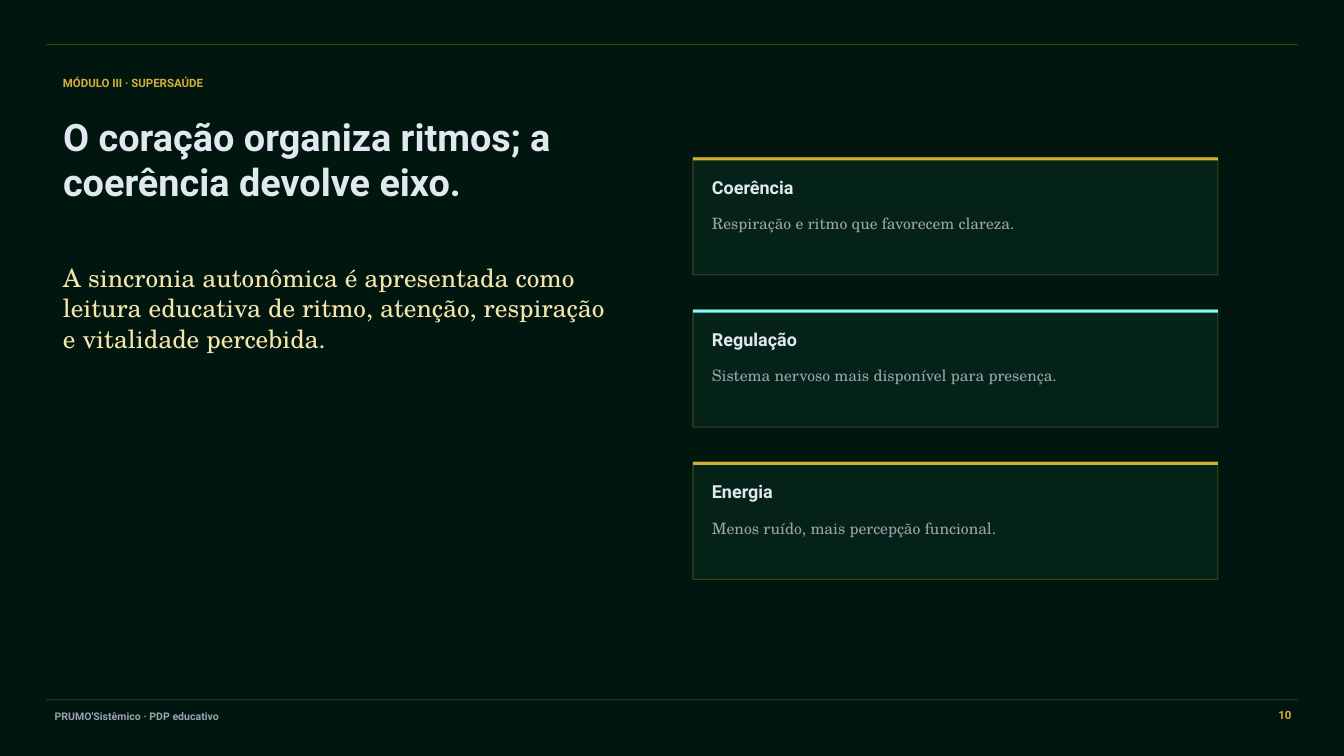
"""Build the slide on heart coherence, with three cards on the right."""
from dataclasses import dataclass

from pptx import Presentation
from pptx.dml.color import RGBColor as RGB
from pptx.enum.shapes import MSO_SHAPE as SHAPE
from pptx.enum.text import MSO_ANCHOR as ANCHOR, MSO_AUTO_SIZE as FIT, PP_ALIGN as ALIGN
from pptx.oxml.ns import qn
from pptx.util import Pt


@dataclass(frozen=True)
class Theme:
    night: str = "01160F"
    panel: str = "08291F"
    gold: str = "D4AF37"
    cyan: str = "7FFCFF"
    light: str = "E2E8F0"
    cream: str = "F3E5AB"
    gray: str = "9CA3AF"
    sans: str = "Roboto"
    serif: str = "TeX Gyre Schola"
    title: float = 27
    lead: float = 18
    heading: float = 12.8
    body: float = 11.2
    label: float = 8.2
    footer: float = 7.5
    line_alpha: int = 27
    panel_alpha: int = 67


T = Theme()
MODULE = "MÓDULO III · SUPERSAÚDE"
TITLE = "O coração organiza ritmos; a coerência devolve eixo."
LEAD = ("A sincronia autonômica é apresentada como leitura educativa de ritmo, "
        "atenção, respiração e vitalidade percebida.")
CARDS = [
    ("Coerência", "Respiração e ritmo que favorecem clareza.", T.gold),
    ("Regulação", "Sistema nervoso mais disponível para presença.", T.cyan),
    ("Energia", "Menos ruído, mais percepção funcional.", T.gold),
]
FOOTER = "PRUMO'Sistêmico · PDP educativo"
PAGE = "10"

WIDTH, HEIGHT = 960, 540
LEFT, COLUMN = 45, 390
RULE_X, RULE_W, RULE_YS = 33, 894, (31.5, 499.5)
CARD_X, CARD_Y, CARD_W, CARD_H, CARD_STEP = 495, 112.4, 375, 84, 108.75
PAD = 13.5


def paint(fill, color, alpha=100):
    fill.solid()
    fill.fore_color.rgb = RGB.from_string(color)
    if alpha < 100:
        for node in fill._xPr.iter(qn("a:srgbClr")):
            if node.get("val") == color and node.find(qn("a:alpha")) is None:
                node.add_alpha(alpha) if hasattr(node, "add_alpha") else \
                    node.makeelement(qn("a:alpha"), {})
                if node.find(qn("a:alpha")) is None:
                    node.append(node.makeelement(qn("a:alpha"), {"val": str(alpha * 1000)}))


def place(sp, x, y, w, h):
    sp.left, sp.top, sp.width, sp.height = Pt(x), Pt(y), Pt(w), Pt(h)


def add_rect(s, box, color, alpha=100, outline=None):
    sp = s.shapes.add_shape(SHAPE.RECTANGLE, *map(Pt, box))
    sp.shadow.inherit = False
    paint(sp.fill, color, alpha)
    if outline:
        sp.line.width = Pt(0.75)
        paint(sp.line.fill, outline, T.line_alpha)
    else:
        sp.line.fill.background()


def write(sp, text, size, color, font=T.sans, bold=True, align=ALIGN.LEFT):
    tf = sp.text_frame
    tf.word_wrap, tf.auto_size, tf.vertical_anchor = True, FIT.NONE, ANCHOR.TOP
    tf.margin_left = tf.margin_top = tf.margin_right = tf.margin_bottom = 0
    p = tf.paragraphs[0]
    p.alignment = align
    r = p.add_run()
    r.text = text
    r.font.name, r.font.size, r.font.bold = font, Pt(size), bold
    r.font.color.rgb = RGB.from_string(color)


def add_text(s, box, *args, **style):
    write(s.shapes.add_textbox(*map(Pt, box)), *args, **style)


def add_card(s, y, heading, body, accent):
    add_rect(s, (CARD_X, y, CARD_W, CARD_H), T.panel, T.panel_alpha, T.gold)
    add_rect(s, (CARD_X, y, CARD_W, 2.25), accent)
    x, w = CARD_X + PAD, CARD_W - 2 * PAD
    add_text(s, (x, y + PAD, w, 19.5), heading, T.heading, T.light)
    add_text(s, (x, y + 40.5, w, 34.5), body, T.body, T.gray, font=T.serif, bold=False)


def main():
    prs = Presentation()
    prs.slide_width, prs.slide_height = Pt(WIDTH), Pt(HEIGHT)
    s = prs.slides.add_slide(prs.slide_layouts[5])
    paint(s.background.fill, T.night)
    for y in RULE_YS:
        add_rect(s, (RULE_X, y, RULE_W, 0.75), T.gold, T.line_alpha)

    add_text(s, (LEFT, 54, COLUMN, 16.5), MODULE, T.label, T.gold)
    place(s.shapes.title, LEFT, 81, 443, 99)
    write(s.shapes.title, TITLE, T.title, T.light)
    add_text(s, (LEFT, 187.5, COLUMN, 135), LEAD, T.lead, T.cream, font=T.serif, bold=False)

    for i, card in enumerate(CARDS):
        add_card(s, CARD_Y + i * CARD_STEP, *card)

    add_text(s, (39, 507, COLUMN, 13.5), FOOTER, T.footer, T.gray)
    add_text(s, (892.5, 505.5, 30, 13.5), PAGE, T.label, T.gold, align=ALIGN.RIGHT)
    prs.save("out.pptx")


if __name__ == "__main__":
    main()
